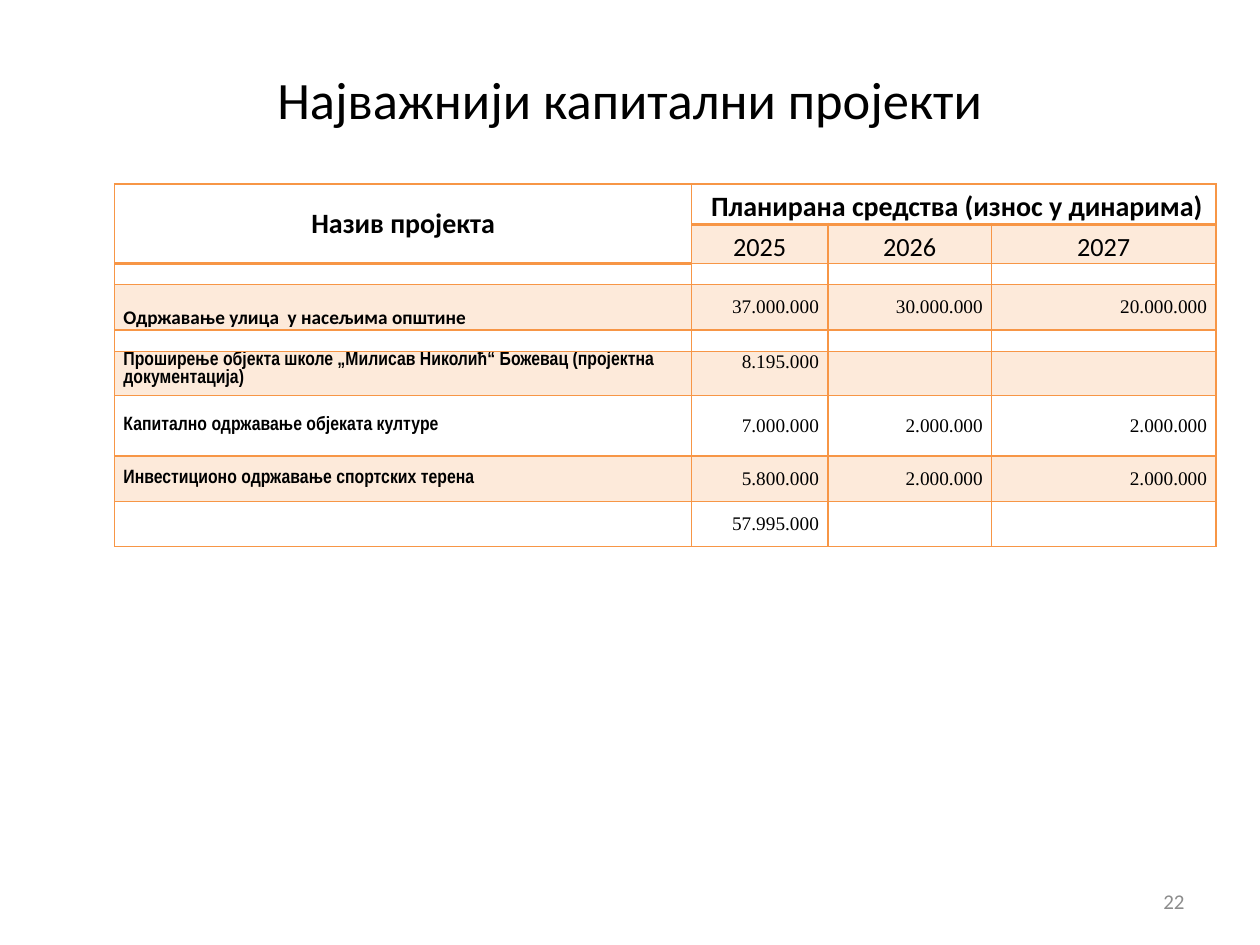
"""Build the slide that lists the main capital projects and their planned funds."""
import dataclasses
import typing

import lxml.etree
import pptx
import pptx.dml.color
import pptx.enum.text
import pptx.oxml.ns
import pptx.util

Inches = pptx.util.Inches
Pt = pptx.util.Pt
RGB = pptx.dml.color.RGBColor
Align = pptx.enum.text.PP_ALIGN
Anchor = pptx.enum.text.MSO_ANCHOR
qn = pptx.oxml.ns.qn

ORANGE = RGB(0xF7, 0x96, 0x46)
BLACK = RGB(0, 0, 0)
GREY = RGB(0x8C, 0x8C, 0x8C)

COLS = (4.58, 1.08, 1.3, 1.78)
ROWS = (0.32, 0.31, 0.17, 0.36, 0.17, 0.35, 0.48, 0.36, 0.36)
YEARS = ("2025", "2026", "2027")


@dataclasses.dataclass(frozen=True)
class Style:
    """Look of a piece of text."""
    size: float
    font: str = "Calibri"
    bold: bool = False
    align: Align = Align.LEFT
    color: RGB = BLACK


@dataclasses.dataclass(frozen=True)
class Project:
    """One project row with its sums by year."""
    row: int
    name: str
    sums: tuple[str, ...]
    font: str = "Arial Narrow"
    side: Anchor = Anchor.MIDDLE
    sumside: Anchor = Anchor.MIDDLE


TITLE = Style(30, align=Align.CENTER)
HEAD = Style(16, bold=True, align=Align.CENTER)
YEAR = Style(15, align=Align.CENTER)
SUM = Style(11, "Times New Roman", align=Align.RIGHT)
PAGE = Style(12, align=Align.RIGHT, color=GREY)

PROJECTS = (
    Project(3, "Одржавање улица  у насељима општине",
            ("37.000.000", "30.000.000", "20.000.000"), "Calibri", Anchor.BOTTOM),
    Project(5, "Проширење објекта школе „Милисав Николић“ Божевац (пројектна документација)",
            ("8.195.000",), side=Anchor.TOP, sumside=Anchor.TOP),
    Project(6, "Капитално одржавање објеката културе",
            ("7.000.000", "2.000.000", "2.000.000")),
    Project(7, "Инвестиционо одржавање спортских терена",
            ("5.800.000", "2.000.000", "2.000.000")),
    Project(8, "", ("57.995.000",)),
)


def write(frame: typing.Any, text: str, style: Style) -> None:
    """Put one styled run into a text frame."""
    para = frame.paragraphs[0]
    para.alignment = style.align
    run = para.add_run()
    run.text = text
    run.font.size = Pt(style.size)
    run.font.name = style.font
    run.font.bold = style.bold
    run.font.color.rgb = style.color


def edge(cell: typing.Any, wide: bool) -> None:
    """Draw the four borders of a cell, the lower one thick if wide."""
    props = cell._tc.get_or_add_tcPr()
    for spot, side in enumerate("LRTB"):
        line = lxml.etree.Element(qn(f"a:ln{side}"))
        line.set("w", str(Pt(2 if wide and side == "B" else 1)))
        fill = lxml.etree.SubElement(line, qn("a:solidFill"))
        lxml.etree.SubElement(fill, qn("a:srgbClr")).set("val", str(ORANGE))
        props.insert(spot, line)


def shade(cell: typing.Any) -> None:
    """Fill a cell with light orange."""
    cell.fill.solid()
    cell.fill.fore_color.rgb = ORANGE
    tint = cell._tc.tcPr.find(qn("a:solidFill"))[0]
    lxml.etree.SubElement(tint, qn("a:alpha")).set("val", "20000")


def dress(cell: typing.Any, row: int, col: int) -> None:
    """Give a cell its margins, borders, fill and empty text size."""
    cell.margin_left = cell.margin_right = Inches(0.07)
    cell.margin_top = cell.margin_bottom = 0
    edge(cell, row == 0 or (row, col) == (1, 0))
    if row % 2 and (row, col) != (1, 0):
        shade(cell)
    else:
        cell.fill.background()
    para = cell.text_frame.paragraphs[0]._p
    lxml.etree.SubElement(para, qn("a:endParaRPr")).set("sz", "800")


def label(cell: typing.Any, text: str, style: Style, side: Anchor) -> None:
    """Write text into a cell at the given height."""
    cell.vertical_anchor = side
    write(cell.text_frame, text, style)


def grid(slide: typing.Any) -> None:
    """Add the table of projects."""
    frame = slide.shapes.add_table(
        len(ROWS), len(COLS), Inches(0.91), Inches(1.46),
        Inches(sum(COLS)), Inches(sum(ROWS)))
    table = frame.table
    table.first_row = table.horz_banding = False
    for col, width in zip(table.columns, COLS):
        col.width = Inches(width)
    for row, height in zip(table.rows, ROWS):
        row.height = Inches(height)
    for row in range(len(ROWS)):
        for col in range(len(COLS)):
            dress(table.cell(row, col), row, col)
    table.cell(0, 0).merge(table.cell(1, 0))
    table.cell(0, 1).merge(table.cell(0, 3))
    label(table.cell(0, 0), "Назив пројекта", HEAD, Anchor.MIDDLE)
    label(table.cell(0, 1), " Планирана средства (износ у динарима)", HEAD, Anchor.BOTTOM)
    for col, year in enumerate(YEARS, 1):
        label(table.cell(1, col), year, YEAR, Anchor.BOTTOM)
    for item in PROJECTS:
        if item.name:
            style = Style(11, item.font, bold=True)
            label(table.cell(item.row, 0), item.name, style, item.side)
        for col, value in enumerate(item.sums, 1):
            label(table.cell(item.row, col), value, SUM, item.sumside)


def main() -> None:
    """Make the deck and save it."""
    deck = pptx.Presentation()
    deck.slide_width, deck.slide_height = Inches(10), Inches(7.5)
    slide = deck.slides.add_slide(deck.slide_layouts[5])
    title = slide.shapes.title
    title.left, title.top = Inches(0.5), Inches(0.3)
    title.width, title.height = Inches(9), Inches(0.96)
    title.text_frame.vertical_anchor = Anchor.MIDDLE
    write(title.text_frame, "Најважнији капитални пројекти", TITLE)
    grid(slide)
    page = slide.shapes.add_textbox(Inches(7.17), Inches(6.95), Inches(2.33), Inches(0.4))
    page.text_frame.word_wrap = True
    page.text_frame.vertical_anchor = Anchor.MIDDLE
    write(page.text_frame, "22", PAGE)
    deck.save("out.pptx")


if __name__ == "__main__":
    main()
